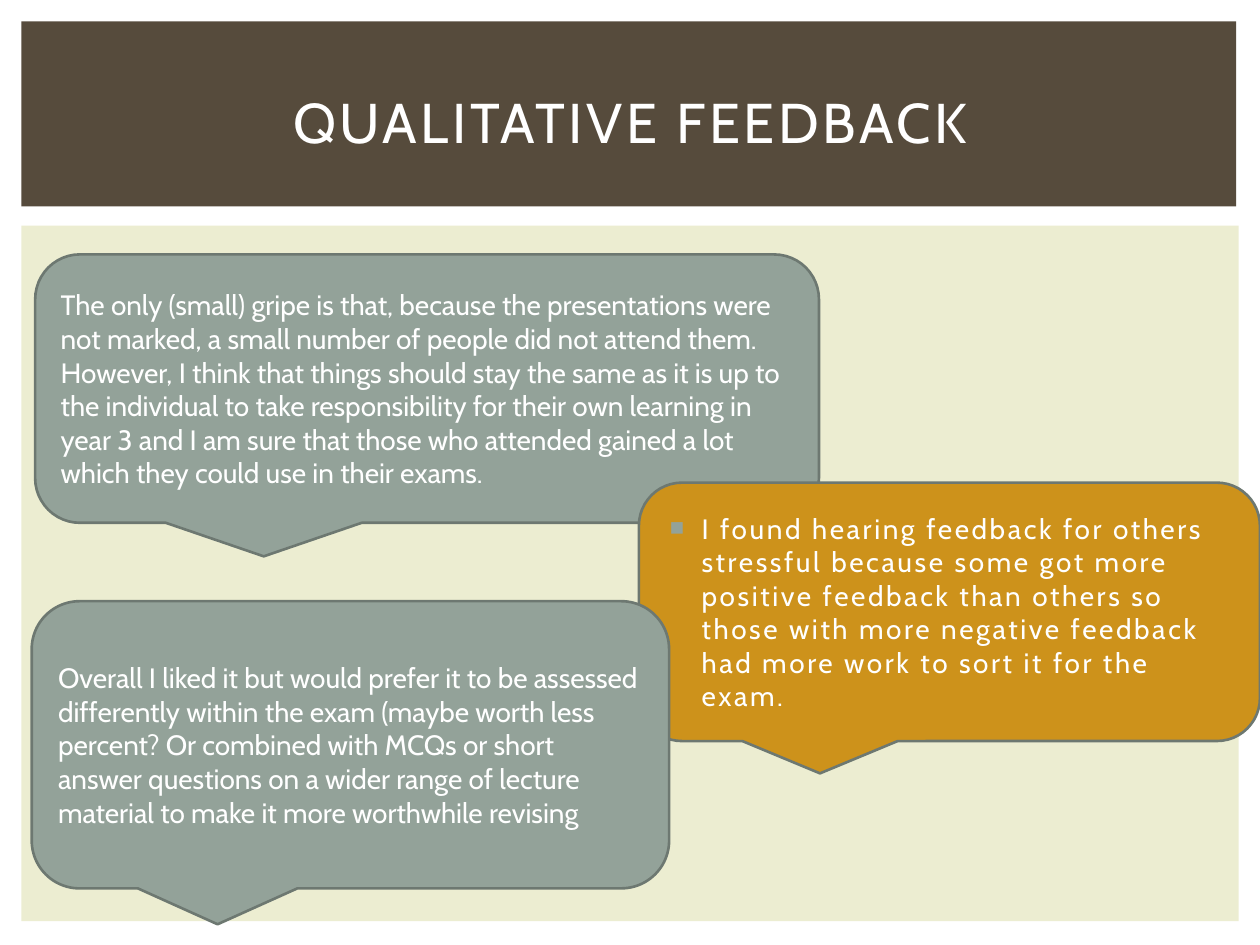
import pptx
import pptx.util
import pptx.dml.color
import pptx.enum.shapes
import pptx.enum.text
import pptx.oxml
import pptx.oxml.ns

Cm, Pt = pptx.util.Cm, pptx.util.Pt
SHAPE = pptx.enum.shapes.MSO_SHAPE
ALIGN = pptx.enum.text.PP_ALIGN
COLORS = {"header": "564B3C", "panel": "ECEDD1", "sage": "93A299",
          "amber": "CD921B", "outline": "6D7871", "text": "FFFFFF"}
HEADER = (0.43, 0.43, 24.49, 3.73)
PANEL = (0.43, 4.55, 24.54, 14.02)
GRIPE = ("The only (small) gripe is that, because the presentations were not marked, "
         "a small number of people did not attend them. However, I think that things "
         "should stay the same as it is up to the individual to take responsibility for "
         "their own learning in year 3 and I am sure that those who attended gained a lot "
         "which they could use in their exams.")
STRESS = ("I found hearing feedback for others stressful because some got more positive "
          "feedback than others so those with more negative feedback had more work to "
          "sort it for the exam.")
OVERALL = ("Overall I liked it but would prefer it to be assessed differently within the "
           "exam (maybe worth less percent? Or combined with MCQs or short answer "
           "questions on a wider range of lecture material to make it more worthwhile "
           "revising")
CALLOUTS = [
    ((0.28, 0.58, 15.8, 5.41), "sage", GRIPE, False),
    ((12.45, 5.18, 12.52, 5.21), "amber", STRESS, True),
    ((0.21, 7.57, 12.85, 5.79), "sage", OVERALL, False),
]


def rgb(name):
    """Return the named colour."""
    return pptx.dml.color.RGBColor.from_string(COLORS[name])


def apply(obj, values):
    """Set each attribute of obj from a dict."""
    for key, value in values.items():
        setattr(obj, key, value)


def add_block(s, kind, box, fill, line=None):
    """Add a filled shape in a box given in centimetres."""
    sp = s.shapes.add_shape(kind, *map(Cm, box))
    sp.shadow.inherit = False
    sp.fill.solid()
    sp.fill.fore_color.rgb = rgb(fill)
    if line:
        sp.line.color.rgb = rgb(line)
        sp.line.width = Pt(1.5)
    else:
        sp.line.fill.background()
    return sp


def write(sp, text, size, align, spacing=0):
    """Write one paragraph into a shape and return it."""
    tf = sp.text_frame
    apply(tf, {"word_wrap": True,
               "auto_size": pptx.enum.text.MSO_AUTO_SIZE.NONE,
               "vertical_anchor": pptx.enum.text.MSO_ANCHOR.MIDDLE})
    p = tf.paragraphs[0]
    p.alignment = align
    r = p.add_run()
    r.text = text
    apply(r.font, {"size": Pt(size), "name": "Cabin"})
    r.font.color.rgb = rgb("text")
    if spacing:
        r.font._element.set("spc", str(int(spacing * 100)))
    return p


def add_bullet(p):
    """Give a paragraph a square bullet with a hanging indent."""
    p.space_before = Pt(3.2)
    pPr = p._p.get_or_add_pPr()
    pPr.set("marL", str(Cm(0.76)))
    pPr.set("indent", str(-Cm(0.64)))
    ns = pptx.oxml.ns.nsdecls("a")
    for xml in (f'<a:buClr {ns}><a:srgbClr val="{COLORS["sage"]}"/></a:buClr>',
                f'<a:buSzPct {ns} val="85000"/>',
                f'<a:buFont {ns} typeface="Arial"/>',
                f'<a:buChar {ns} char="■"/>'):
        pPr.append(pptx.oxml.parse_xml(xml))


def add_header(s, box):
    """Draw the header band and place the title on it."""
    left, top, width, height = box
    add_block(s, SHAPE.RECTANGLE, box, "header")
    title = s.shapes.title
    apply(title, {"left": Cm(left + 0.64), "top": Cm(top + 0.56),
                  "width": Cm(width - 1.2), "height": Cm(height - 0.81)})
    write(title, "QUALITATIVE FEEDBACK", 32, ALIGN.CENTER, 2)
    s.shapes._spTree.append(title._element)


def add_feedback(s, box):
    """Draw the panel and its speech callouts."""
    left, top = box[:2]
    add_block(s, SHAPE.RECTANGLE, box, "panel")
    for (x, y, width, height), fill, text, bulleted in CALLOUTS:
        sp = add_block(s, SHAPE.ROUNDED_RECTANGULAR_CALLOUT,
                       (left + x, top + y, width, height), fill, "outline")
        p = write(sp, text, 16, ALIGN.LEFT, 1.5 if bulleted else 0)
        if bulleted:
            add_bullet(p)


def main():
    """Build and save the slide."""
    prs = pptx.Presentation()
    apply(prs, {"slide_width": Cm(25.4), "slide_height": Cm(19.05)})
    s = prs.slides.add_slide(prs.slide_layouts[5])
    add_header(s, HEADER)
    add_feedback(s, PANEL)
    prs.save("out.pptx")


if __name__ == "__main__":
    main()
